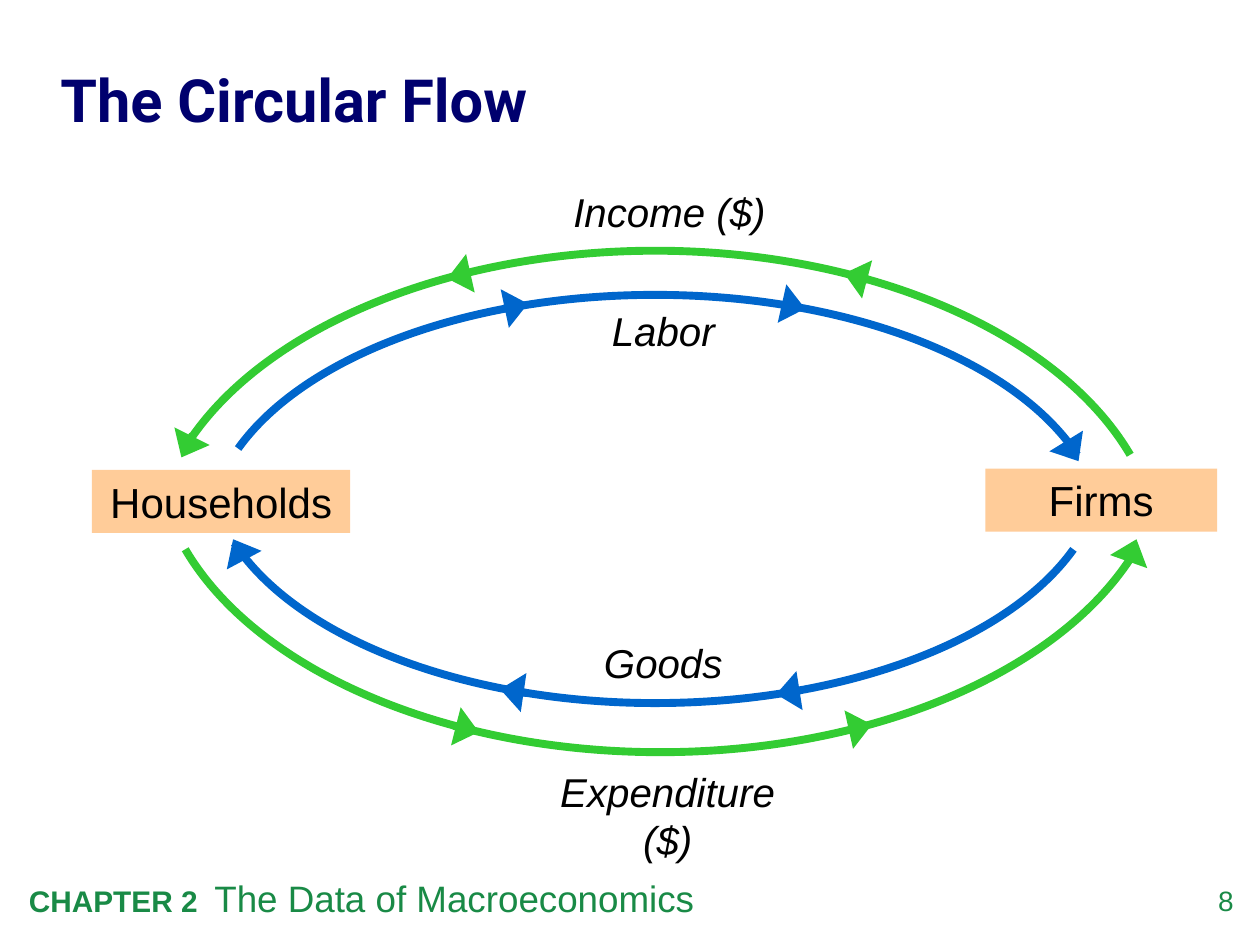
from copy import deepcopy
from dataclasses import dataclass

from lxml.etree import SubElement
from pptx import Presentation
from pptx.dml.color import RGBColor
from pptx.enum.shapes import MSO_CONNECTOR, MSO_SHAPE
from pptx.enum.text import MSO_ANCHOR, PP_ALIGN
from pptx.oxml.ns import qn
from pptx.util import Emu, Pt

PX = 9144  # EMU per px, 100 px to the inch
FLOW_WIDTH = Pt(4.5)
COLORS = {
    "title": "00006E",
    "footer": "198A46",
    "text": "000000",
    "box": "FFCC99",
    "real": "0066CC",
    "money": "33CC33",
}

Point = tuple[int, int]
Box = tuple[int, int, int, int]


@dataclass
class Flow:
    label: str
    label_box: Box
    color: str
    curve: list[Point]  # start, then two controls and an end per Bézier
    center: Point
    arrows: list[tuple[Point, Point]]


@dataclass
class Actor:
    name: str
    box: Box


ACTORS = [
    Actor("Households", (73, 373, 205, 50)),
    Actor("Firms", (782, 372, 184, 50)),
]

FLOWS = [
    Flow("Goods", (431, 502, 191, 48), "real",
         [(852, 436), (799, 510), (667, 558), (520, 558),
          (370, 558), (236, 507), (186, 431)], (520, 366),
         [((193, 443), (185, 428)), ((418, 550), (397, 547)),
          ((635, 548), (616, 551))]),
    Flow("Labor", (431, 238, 191, 48), "real",
         [(189, 356), (242, 282), (373, 234), (520, 234),
          (670, 234), (804, 284), (855, 361)], (520, 425),
         [((400, 245), (419, 241)), ((621, 241), (639, 245)),
          ((848, 353), (856, 366))]),
    Flow("Expenditure ($)", (411, 604, 238, 48), "money",
         [(898, 442), (838, 535), (690, 597), (524, 597),
          (355, 597), (204, 533), (147, 436)], (524, 354),
         [((896, 445), (902, 428)), ((360, 576), (380, 581)),
          ((674, 579), (692, 575))]),
    Flow("Income ($)", (436, 144, 191, 48), "money",
         [(147, 355), (206, 261), (355, 199), (520, 199),
          (689, 199), (840, 264), (897, 361)], (520, 442),
         [((689, 222), (670, 217)), ((373, 217), (355, 221)),
          ((153, 345), (144, 363))]),
]


def rgb(name: str) -> RGBColor:
    return RGBColor.from_string(COLORS[name])


def emu(values) -> list[Emu]:
    return [Emu(v * PX) for v in values]


def add_run(p, text: str, *, size: float, color="text", font="Arial",
            bold=False, italic=False) -> None:
    r = p.add_run()
    r.text = text
    r.font.size = Pt(size)
    r.font.name = font
    r.font.bold = bold
    r.font.italic = italic
    r.font.color.rgb = rgb(color)


def write(sp, *runs: tuple[str, dict], align=PP_ALIGN.LEFT,
          anchor=MSO_ANCHOR.TOP, inset=True, spacing=None, **fmt) -> None:
    """Fill a shape with one paragraph; each run may override the format."""
    tf = sp.text_frame
    tf.word_wrap = True
    tf.vertical_anchor = anchor
    if not inset:
        tf.margin_left = tf.margin_right = tf.margin_top = tf.margin_bottom = 0
    p = tf.paragraphs[0]
    p.alignment = align
    if spacing:
        p.line_spacing = spacing
    for text, own in runs:
        add_run(p, text, **(fmt | own))


def add_text(slide, box: Box, *runs: tuple[str, dict], **fmt) -> None:
    write(slide.shapes.add_textbox(*emu(box)), *runs, **fmt)


def add_actor(slide, actor: Actor) -> None:
    sp = slide.shapes.add_shape(MSO_SHAPE.RECTANGLE, *emu(actor.box))
    sp.shadow.inherit = False
    sp.fill.solid()
    sp.fill.fore_color.rgb = rgb("box")
    sp.line.fill.background()
    write(sp, (actor.name, {}), size=24, align=PP_ALIGN.CENTER)


def bend(path) -> None:
    """Turn each three line segments of a path into one Bézier segment."""
    lines = path.findall(qn("a:lnTo"))
    for i in range(0, len(lines) - 2, 3):
        first, *others = lines[i:i + 3]
        first.tag = qn("a:cubicBezTo")
        for line in others:
            first.append(line[0])
            path.remove(line)


def add_curve(slide, flow: Flow) -> None:
    """Draw an open arc whose unstroked sector reaches to the center."""
    builder = slide.shapes.build_freeform(*flow.curve[0], scale=float(PX))
    builder.add_line_segments([*flow.curve[1:], flow.center], close=False)
    sp = builder.convert_to_shape()
    arc = next(sp._element.iter(qn("a:path")))
    sector = deepcopy(arc)
    sector.set("stroke", "0")
    SubElement(sector, qn("a:close"))
    arc.remove(arc[-1])
    arc.addnext(sector)
    for path in (arc, sector):
        bend(path)
    sp.shadow.inherit = False
    sp.fill.background()
    sp.line.color.rgb = rgb(flow.color)
    sp.line.width = FLOW_WIDTH


def add_arrow(slide, start: Point, end: Point, color: str) -> None:
    line = slide.shapes.add_connector(MSO_CONNECTOR.STRAIGHT, *emu(start + end))
    line.line.color.rgb = rgb(color)
    line.line.width = FLOW_WIDTH
    props = line._element.spPr
    SubElement(props.find(qn("a:ln")), qn("a:tailEnd"),
               type="triangle", w="lg", len="med")
    SubElement(props, qn("a:effectLst"))


def add_flow(slide, flow: Flow) -> None:
    add_text(slide, flow.label_box, (flow.label, {}), size=23, italic=True,
             align=PP_ALIGN.CENTER)
    add_curve(slide, flow)
    for start, end in flow.arrows:
        add_arrow(slide, start, end, flow.color)


def main() -> None:
    prs = Presentation()
    prs.slide_width, prs.slide_height = emu((1000, 750))
    s = prs.slides.add_slide(prs.slide_layouts[6])

    add_text(s, (924, 701, 55, 32), ("8", {}), size=16, color="footer",
             align=PP_ALIGN.RIGHT, inset=False)
    add_text(s, (13, 690, 818, 45),
             ("CHAPTER 2  ", {"size": 17, "bold": True}),
             ("The Data of Macroeconomics", {"size": 21}), color="footer")
    add_text(s, (48, 33, 952, 88), ("The Circular Flow", {}), size=34,
             font="Roboto", color="title", bold=True, spacing=1.05,
             anchor=MSO_ANCHOR.MIDDLE, inset=False)
    for actor in ACTORS:
        add_actor(s, actor)
    for flow in FLOWS:
        add_flow(s, flow)

    prs.save("out.pptx")


if __name__ == "__main__":
    main()
